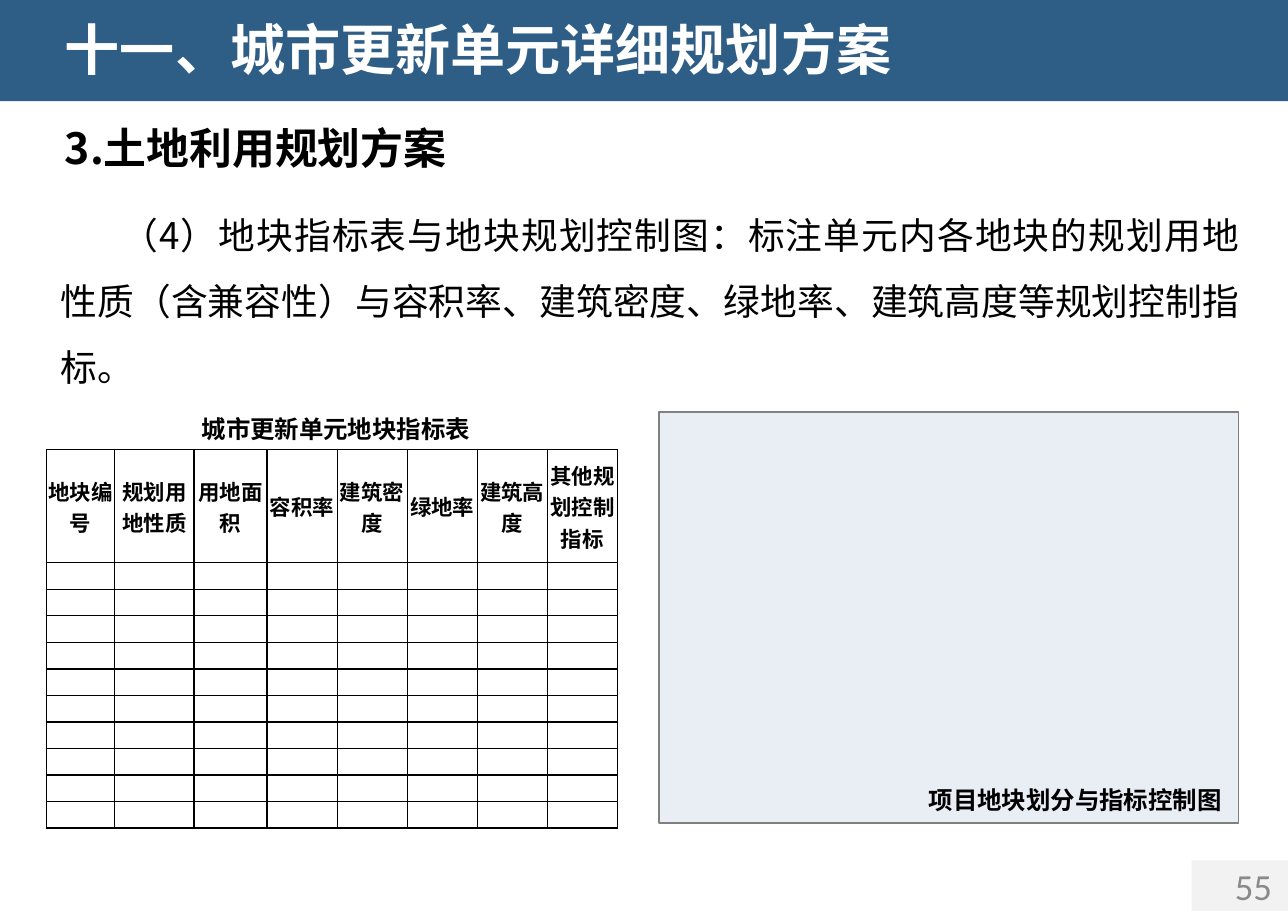
import pptx
import pptx.util
import pptx.dml.color
import pptx.enum.shapes
import pptx.enum.text
import pptx.oxml
import pptx.oxml.ns
from dataclasses import dataclass
from lxml import etree

Pt = pptx.util.Pt
qn = pptx.oxml.ns.qn
ALIGN = pptx.enum.text.PP_ALIGN
ANCHOR = pptx.enum.text.MSO_ANCHOR


@dataclass(frozen=True)
class Theme:
    font: str = "Noto Sans CJK SC"
    number_font: str = "Calibri"
    banner: str = "2E5E86"
    panel: str = "2F5597"
    gray: str = "808080"
    number: str = "898989"
    black: str = "000000"
    white: str = "FFFFFF"
    title: int = 36
    heading: int = 28
    body: int = 24
    caption: int = 16
    header: int = 14
    blank: int = 8


THEME = Theme()
WIDTH, HEIGHT = 841.68, 595.44
COL_WIDTHS = [44.8, 51.8, 47.8] + [45.8] * 5
HEADERS = ["地块编号", "规划用地性质", "用地面积", "容积率",
           "建筑密度", "绿地率", "建筑高度", "其他规划控制指标"]
HEADER_HEIGHT, ROW_HEIGHT, BLANK_ROWS = 74, 17.35, 10


def rgb(color):
    return pptx.dml.color.RGBColor.from_string(color)


def add_run(p, text, size, color=THEME.black, bold=False, font=THEME.font):
    r = p.add_run()
    r.text = text
    r.font.size, r.font.bold, r.font.name = Pt(size), bold, font
    r.font.color.rgb = rgb(color)
    ea = etree.SubElement(r.font._element, qn("a:ea"))
    ea.set("typeface", font)


def add_text(slide, box, text, size, align=ALIGN.LEFT, anchor=ANCHOR.TOP,
             insets=(7.2, 3.6), wrap=True, grow=True, **style):
    tf = slide.shapes.add_textbox(*map(Pt, box)).text_frame
    tf.word_wrap = wrap
    tf.vertical_anchor = anchor
    if grow:
        tf.auto_size = pptx.enum.text.MSO_AUTO_SIZE.SHAPE_TO_FIT_TEXT
    tf.margin_left = tf.margin_right = Pt(insets[0])
    tf.margin_top = tf.margin_bottom = Pt(insets[1])
    p = tf.paragraphs[0]
    p.alignment = align
    add_run(p, text, size, **style)
    return p


def add_caption(slide, box, text, **layout):
    p = add_text(slide, box, text, THEME.caption, bold=True, **layout)
    p.line_spacing = 0.9
    p.space_before = Pt(11)


def add_rect(slide, box, fill, opacity=100, line=None):
    sp = slide.shapes.add_shape(pptx.enum.shapes.MSO_SHAPE.RECTANGLE, *map(Pt, box))
    sp.shadow.inherit = False
    sp.fill.solid()
    sp.fill.fore_color.rgb = rgb(fill)
    if opacity < 100:
        color = sp._element.spPr.find(qn("a:solidFill"))[0]
        etree.SubElement(color, qn("a:alpha")).set("val", str(opacity * 1000))
    if line:
        sp.line.color.rgb = rgb(line)
        sp.line.width = Pt(1)
    else:
        sp.line.fill.background()


def add_banner(slide, box, title):
    x, y, w, h = box
    add_rect(slide, box, THEME.banner)
    add_text(slide, (x + 35.3, y + 6.5, 617.8, 50.4), title, THEME.title,
             color=THEME.white, bold=True)


def add_section(slide, box, heading, body):
    x, y, w, h = box
    add_text(slide, (x, y, 588.2, 41), heading, THEME.heading,
             anchor=ANCHOR.MIDDLE, bold=True)
    p = add_text(slide, (x, y + 46.8, w, h - 46.8), body, THEME.body,
                 align=ALIGN.JUSTIFY, insets=(4.3, 2.2))
    p.line_spacing = 1.5
    pPr = p._p.get_or_add_pPr()
    pPr.set("marL", "0")
    pPr.set("indent", str(Pt(39.6)))


def style_cell(cell):
    cell.fill.background()
    cell.vertical_anchor = ANCHOR.MIDDLE
    cell.margin_left = cell.margin_right = cell.margin_top = Pt(0.7)
    cell.margin_bottom = 0
    tcPr = cell._tc.get_or_add_tcPr()
    for i, side in enumerate(("lnL", "lnR", "lnT", "lnB")):
        ln = etree.Element(qn("a:" + side), w=str(Pt(1)))
        fill = etree.SubElement(ln, qn("a:solidFill"))
        etree.SubElement(fill, qn("a:srgbClr")).set("val", THEME.black)
        tcPr.insert(i, ln)


def add_index_table(slide, box, caption):
    x, y, w, h = box
    add_caption(slide, (x, y, w, 24.5), caption, align=ALIGN.CENTER)
    frame = slide.shapes.add_table(BLANK_ROWS + 1, len(HEADERS), Pt(x), Pt(y + 24.5),
                                   Pt(sum(COL_WIDTHS)), Pt(h - 24.5))
    table = frame.table
    table.first_row = table.horz_banding = False
    for col, width in zip(table.columns, COL_WIDTHS):
        col.width = Pt(width)
    for i, row in enumerate(table.rows):
        row.height = Pt(ROW_HEIGHT if i else HEADER_HEIGHT)
        for cell, header in zip(row.cells, HEADERS):
            style_cell(cell)
            p = cell.text_frame.paragraphs[0]
            p.alignment = ALIGN.CENTER
            if i == 0:
                add_run(p, header, THEME.header, bold=True)
            else:
                end = etree.SubElement(p._p, qn("a:endParaRPr"))
                end.set("sz", str(THEME.blank * 100))


def add_map_panel(slide, box, caption):
    x, y, w, h = box
    add_rect(slide, box, THEME.panel, opacity=10, line=THEME.gray)
    add_caption(slide, (x + 169.2, y + 242.6, w - 169.2, 24.5), caption, wrap=False)


def add_page_number(slide, box, number):
    x, y, w, h = box
    add_rect(slide, box, THEME.gray, opacity=10)
    add_text(slide, (x + 18, y, w - 18, h), number, THEME.body, align=ALIGN.CENTER,
             anchor=ANCHOR.MIDDLE, insets=(0, 0), grow=False,
             color=THEME.number, font=THEME.number_font)


def main():
    prs = pptx.Presentation()
    prs.slide_width, prs.slide_height = Pt(WIDTH), Pt(HEIGHT)
    slide = prs.slides.add_slide(prs.slide_layouts[6])
    add_page_number(slide, (WIDTH - 63, HEIGHT - 33.1, 63, 33.1), "55")
    add_banner(slide, (0, 0, WIDTH, 66.2), "十一、城市更新单元详细规划方案")
    add_section(slide, (35.3, 75.6, 779, 182.2), "3.土地利用规划方案",
                "（4）地块指标表与地块规划控制图：标注单元内各地块的规划用地性质（含兼容性）"
                "与容积率、建筑密度、绿地率、建筑高度等规划控制指标。")
    add_index_table(slide, (30.2, 269.3, 378.7, 272), "城市更新单元地块指标表")
    add_map_panel(slide, (430.6, 269.3, 378.7, 268.6), "项目地块划分与指标控制图")
    prs.save("out.pptx")


if __name__ == "__main__":
    main()
